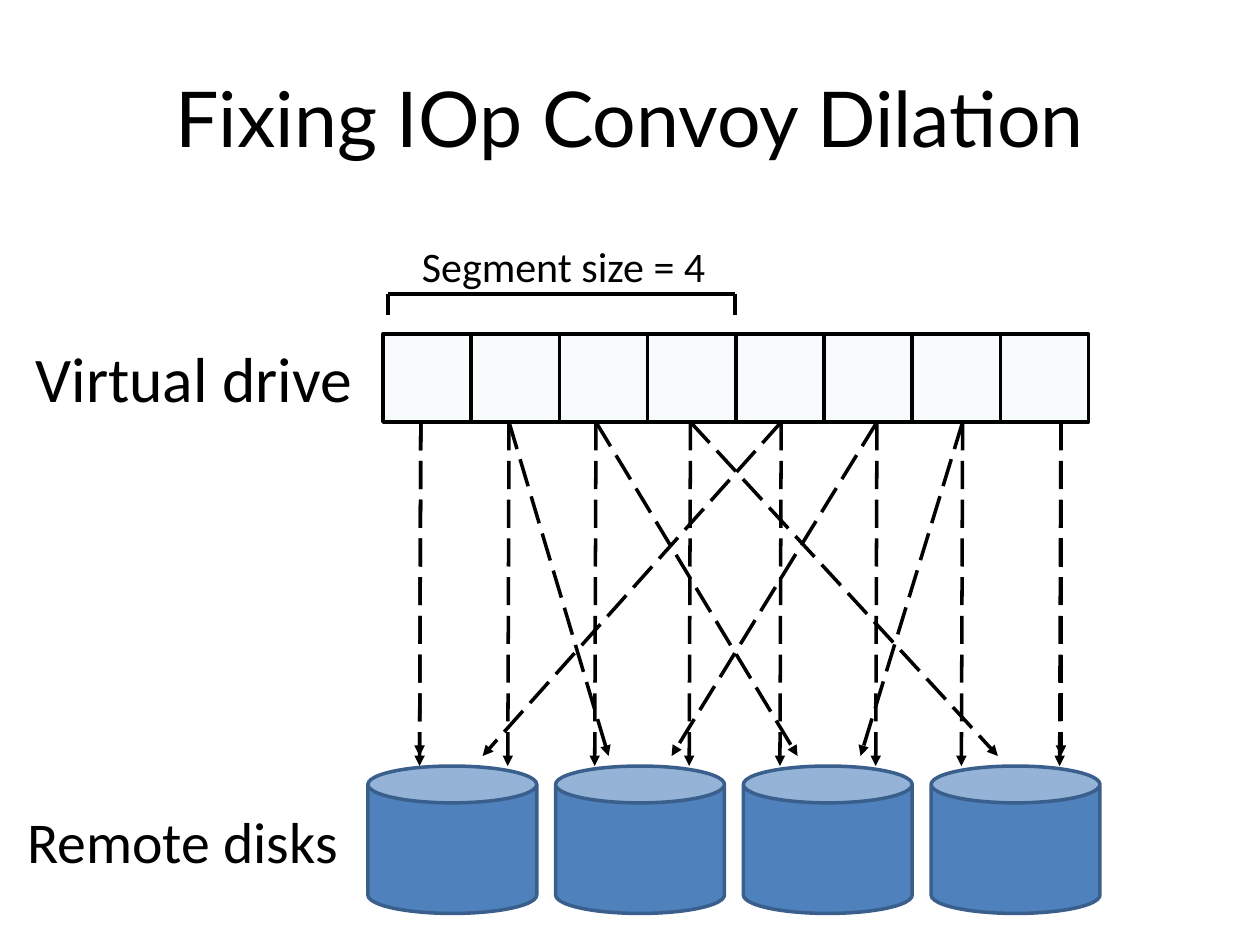
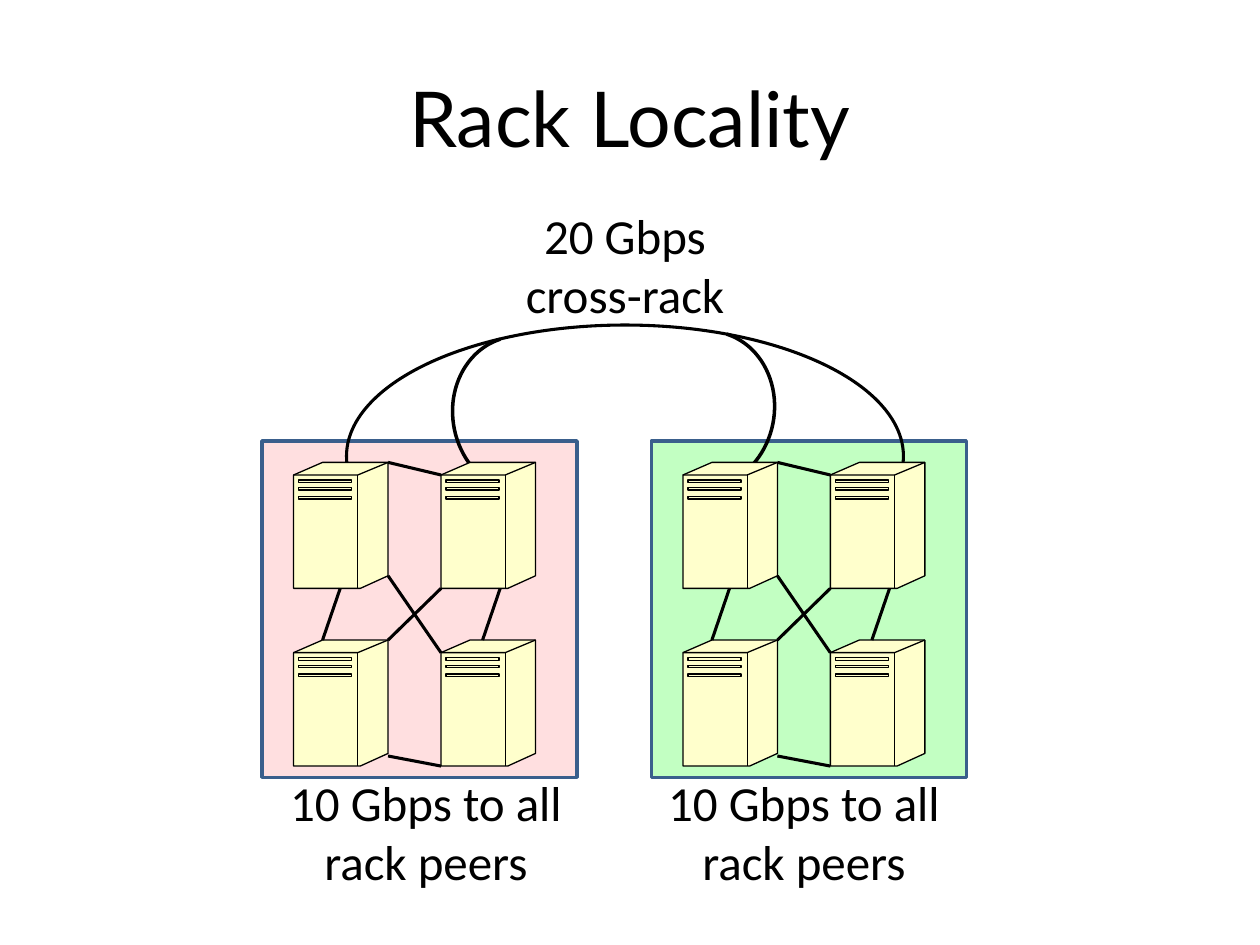
from lxml.etree import SubElement
from pptx import Presentation
from pptx.dml.color import RGBColor
from pptx.enum.dml import MSO_LINE
from pptx.enum.shapes import MSO_CONNECTOR, MSO_SHAPE
from pptx.enum.text import MSO_ANCHOR, PP_ALIGN
from pptx.oxml.ns import qn
from pptx.util import Inches, Pt

BLACK = RGBColor(0x00, 0x00, 0x00)
CELL = RGBColor(0xDB, 0xEE, 0xF4)
DISK = RGBColor(0x4F, 0x81, 0xBD)
OUTLINE = RGBColor(0x3A, 0x5F, 0x8C)
RED_RACK = RGBColor(0xFF, 0x7C, 0x80)
GREEN_RACK = RGBColor(0x00, 0xFF, 0x00)
SERVER = RGBColor(0xFF, 0xFF, 0xCC)
TITLE_FONT, BODY_FONT = "Lato", "Calibri"

# Server outlines, in hundredths of an inch from the server's top left corner
SERVER_BODY = [(0, 10), (23, 0), (75, 0), (75, 90), (53, 100), (0, 100), (0, 10)]
SERVER_EDGES = [[(0, 10), (51, 10), (75, 0)], [(51, 10), (51, 100)]]
SERVER_SLOTS = [[(4, y), (46, y), (46, y + 2), (4, y + 2), (4, y)] for y in (14, 20, 27)]

# Links inside a rack, in inches from the top left server
RACK_LINKS = [
    ((0.37, 1.0), (0.23, 1.41)),
    ((1.64, 1.0), (1.5, 1.41)),
    ((1.17, 1.0), (0.75, 1.41)),
    ((0.75, 0.9), (1.17, 1.51)),
    ((1.17, 2.41), (0.75, 2.33)),
    ((0.75, 0.0), (1.17, 0.1)),
]


def add_text(slide, box, text, size, font=BODY_FONT, align=PP_ALIGN.CENTER,
             anchor=MSO_ANCHOR.TOP):
    frame = slide.shapes.add_textbox(*map(Inches, box)).text_frame
    frame.word_wrap = True
    frame.vertical_anchor = anchor
    paragraph = frame.paragraphs[0]
    paragraph.alignment = align
    run = paragraph.add_run()
    run.text = text
    run.font.name = font
    run.font.size = Pt(size)
    run.font.color.rgb = BLACK


def add_titled_slide(prs, title):
    slide = prs.slides.add_slide(prs.slide_layouts[6])
    add_text(slide, (0.5, 0.3, 9, 1.25), title, 44, TITLE_FONT, anchor=MSO_ANCHOR.MIDDLE)
    return slide


def style(shape, fill, line, width, opacity=100):
    """Set fill (None for no fill) and outline, and drop the shadow."""
    shape.shadow.inherit = False
    shape.line.color.rgb = line
    shape.line.width = Pt(width)
    if fill is None:
        shape.fill.background()
        return
    shape.fill.solid()
    shape.fill.fore_color.rgb = fill
    if opacity < 100:
        color = shape.element.spPr.find(qn("a:solidFill"))[0]
        SubElement(color, qn("a:alpha")).set("val", str(opacity * 1000))


def add_box(slide, kind, box, fill, line=OUTLINE, opacity=100):
    shape = slide.shapes.add_shape(kind, *map(Inches, box))
    style(shape, fill, line, 2, opacity)


def add_arc(slide, box, angles, width=2, rotation=0, flip=False):
    arc = slide.shapes.add_shape(MSO_SHAPE.ARC, *map(Inches, box))
    style(arc, None, BLACK, width)
    arc.adjustments[0], arc.adjustments[1] = angles
    arc.rotation = rotation
    if flip:
        arc.element.spPr.find(qn("a:xfrm")).set("flipH", "1")


def add_line(shapes, start, end, width):
    line = shapes.add_connector(MSO_CONNECTOR.STRAIGHT, *map(Inches, (*start, *end)))
    line.line.color.rgb = BLACK
    line.line.width = Pt(width)
    SubElement(line.element.spPr, qn("a:effectLst"))
    return line


def add_dashed_arrow(slide, start, end):
    arrow = add_line(slide.shapes, start, end, 2)
    arrow.line.dash_style = MSO_LINE.LONG_DASH
    SubElement(arrow.element.spPr.find(qn("a:ln")), qn("a:tailEnd")).set("type", "triangle")


def add_outline(shapes, left, top, strokes, fill):
    """Draw strokes (lists of points) as one freeform placed at left, top."""
    x0, y0 = round(left * 100), round(top * 100)
    placed = [[(x0 + x, y0 + y) for x, y in stroke] for stroke in strokes]
    builder = shapes.build_freeform(*placed[0][0], scale=Inches(0.01))
    for stroke in placed:
        if stroke is not placed[0]:
            builder.move_to(*stroke[0])
        builder.add_line_segments(stroke[1:], close=False)
    style(builder.convert_to_shape(), fill, BLACK, 0.75)


def add_rack_servers(slide, left, top):
    group = slide.shapes.add_group_shape().shapes
    for y in (top, top + 1.41):
        for x in (left, left + 1.17):
            add_outline(group, x, y, [SERVER_BODY], SERVER)
            add_outline(group, x, y, SERVER_EDGES + SERVER_SLOTS, None)
    for (x1, y1), (x2, y2) in RACK_LINKS:
        add_line(group, (left + x1, top + y1), (left + x2, top + y2), 1.75)


def build_convoy_slide(prs):
    slide = add_titled_slide(prs, "Fixing IOp Convoy Dilation")
    for i in range(8):
        add_box(slide, MSO_SHAPE.RECTANGLE, (3.04 + 0.7 * i, 2.65, 0.7, 0.7),
                CELL, BLACK, opacity=22)
    for i in range(4):
        add_box(slide, MSO_SHAPE.CAN, (2.92 + 1.49 * i, 6.08, 1.34, 1.17), DISK)

    cell_exits = [3.34, 4.04, 4.73, 5.48, 6.2, 6.96, 7.64, 8.42]
    striped_targets = [3.33, 4.83, 6.33, 7.92, 3.83, 5.33, 6.83, 8.42]
    for x, target in zip(cell_exits, striped_targets):
        add_dashed_arrow(slide, (x, 3.35), (target, 6))
        add_dashed_arrow(slide, (x, 3.35), (x - 0.01, 6.08))

    add_text(slide, (0.17, 2.7, 2.74, 0.58), "Virtual drive", 36.3, anchor=MSO_ANCHOR.MIDDLE)
    add_text(slide, (0.08, 6.38, 2.74, 0.58), "Remote disks", 33, anchor=MSO_ANCHOR.MIDDLE)

    segment_left, segment_right = 3.08, 5.83
    add_line(slide.shapes, (segment_left, 2.33), (segment_right, 2.33), 2.25)
    for x in (segment_left, segment_right):
        add_line(slide.shapes, (x, 2.5), (x, 2.33), 2.25)
    add_text(slide, (3.25, 1.86, 2.83, 0.5), "Segment size = 4", 24, align=PP_ALIGN.LEFT)


def build_rack_slide(prs):
    slide = add_titled_slide(prs, "Rack Locality")
    racks = [(2.08, RED_RACK, 2.17), (5.17, GREEN_RACK, 5.17)]
    for left, color, _ in racks:
        add_box(slide, MSO_SHAPE.RECTANGLE, (left, 3.5, 2.5, 2.67), color, opacity=24)

    inner_angles = (138.7, 213.01)
    add_arc(slide, (4.96, 2.7, 1.26, 1.11), inner_angles, rotation=101.5, flip=True)
    add_arc(slide, (3.52, 2.74, 1.26, 1.11), inner_angles, rotation=258.5)
    add_arc(slide, (2.75, 2.58, 4.42, 2.08), (105.48, 0.74), width=1.75)

    for left, _, caption_left in racks:
        add_rack_servers(slide, left + 0.25, 3.67)
        add_text(slide, (caption_left, 6.08, 2.42, 1.04), "10 Gbps to all rack peers", 28)
    add_text(slide, (3.75, 1.58, 2.42, 1.04), "20 Gbps cross-rack", 28)


def main():
    prs = Presentation()
    prs.slide_width, prs.slide_height = Inches(10), Inches(7.5)
    build_convoy_slide(prs)
    build_rack_slide(prs)
    prs.save("out.pptx")


if __name__ == "__main__":
    main()
